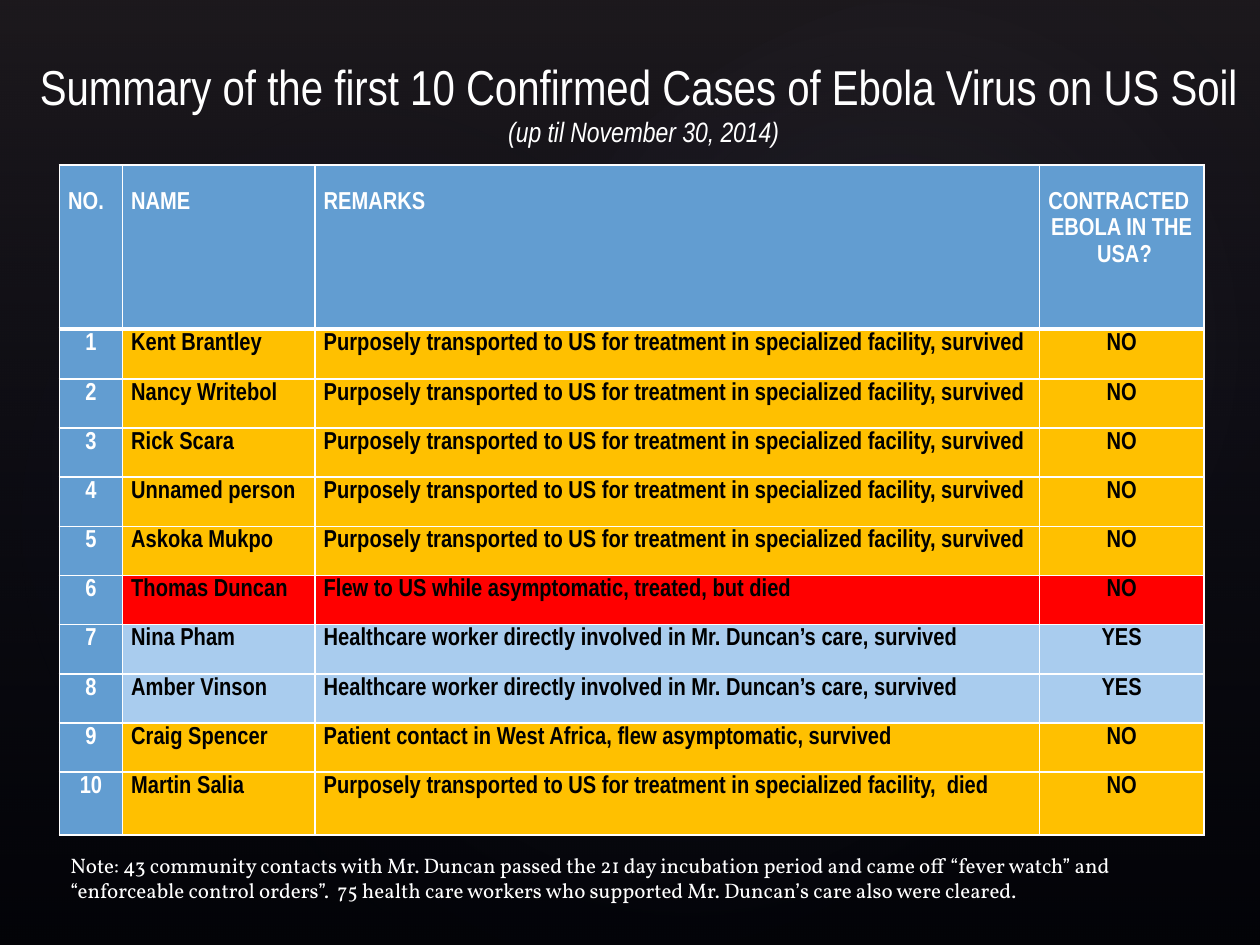
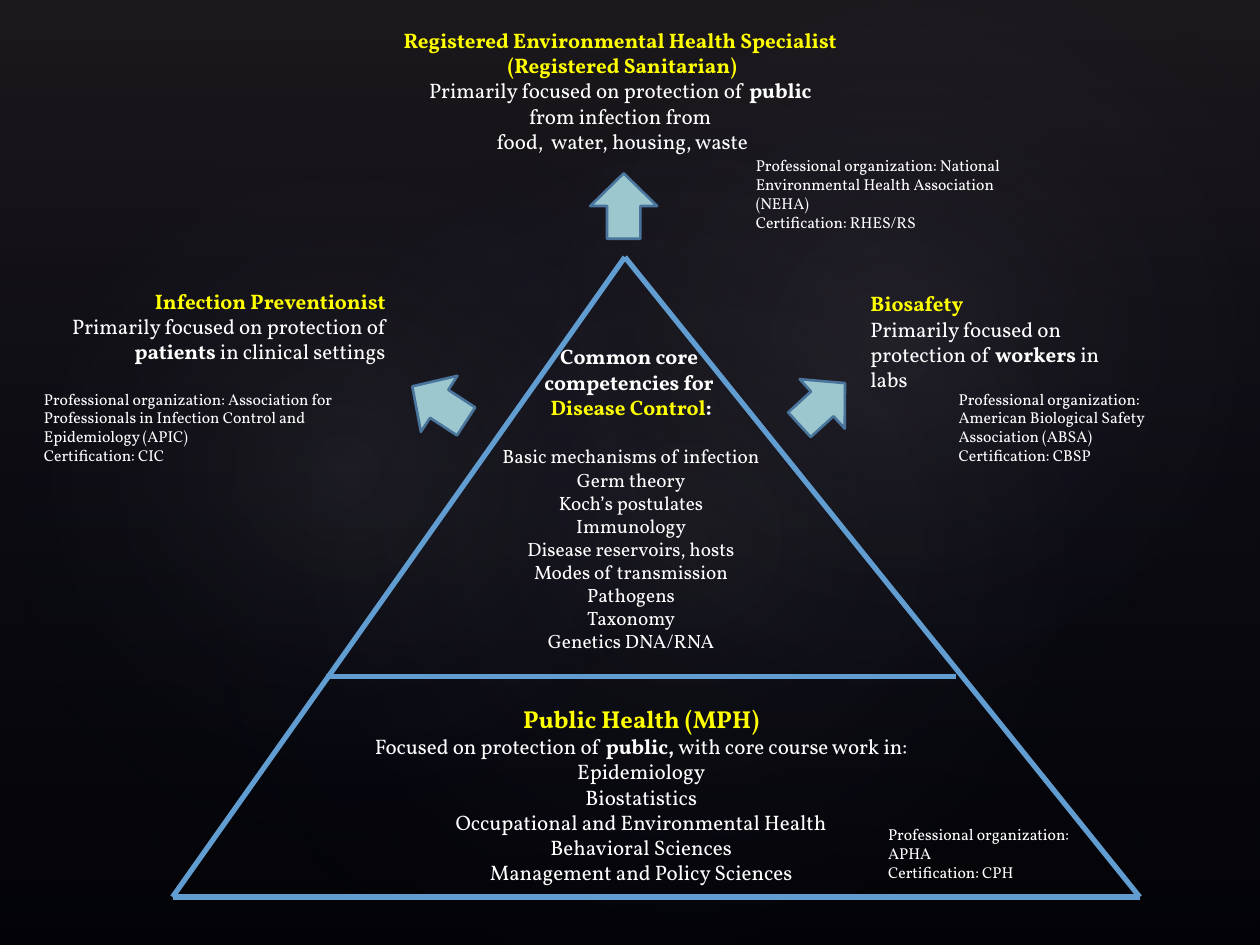
from pptx import Presentation
from pptx.dml.color import RGBColor
from pptx.enum.shapes import MSO_CONNECTOR, MSO_SHAPE
from pptx.enum.text import PP_ALIGN
from pptx.oxml import parse_xml
from pptx.oxml.ns import nsdecls, qn
from pptx.util import Pt

LEFT, CENTER, RIGHT = PP_ALIGN.LEFT, PP_ALIGN.CENTER, PP_ALIGN.RIGHT
RECTANGLE, OVAL, LEFT_ARROW = MSO_SHAPE.RECTANGLE, MSO_SHAPE.OVAL, MSO_SHAPE.LEFT_ARROW
STRAIGHT = MSO_CONNECTOR.STRAIGHT

BLACK, WHITE, YELLOW = "000000", "FFFFFF", "FFFF00"
BLUE, PALE_BLUE, AMBER, RED = "629DD1", "A9CCEE", "FFC000", "FF0000"
ARROW_FILL, ARROW_EDGE = "9CC7CE", "49749B"
VEIL, NAVY, GLOW = "504652", "242852", "C4BCC6"
NARROW, SERIF = "Arial Narrow", "Vollkorn"

GLOWS = [
    (108, 82, 570, 449, 328.7, 7),
    (-21.6, 92.2, 436.3, 352.8, 294.3, 8),
    (257.8, 9.4, 510.5, 374.4, 328.7, 8),
]

HEADINGS = ["NO.", "NAME", "REMARKS", "CONTRACTED \nEBOLA IN THE\n USA?"]
COLUMN_WIDTHS = [36, 110, 414, 94]
ROW_HEIGHTS = [93.6, 28.6] + [28.1] * 8 + [36]
TRANSPORTED = "Purposely transported to US for treatment in specialized facility, "
CARE_WORKER = "Healthcare worker directly involved in Mr. Duncan’s care, survived"
CASES = [
    ("Kent Brantley", TRANSPORTED + "survived", "NO", AMBER),
    ("Nancy Writebol", TRANSPORTED + "survived", "NO", AMBER),
    ("Rick Scara", TRANSPORTED + "survived", "NO", AMBER),
    ("Unnamed person", TRANSPORTED + "survived", "NO", AMBER),
    ("Askoka Mukpo", TRANSPORTED + "survived", "NO", AMBER),
    ("Thomas Duncan", "Flew to US while asymptomatic, treated, but died", "NO", RED),
    ("Nina Pham", CARE_WORKER, "YES", PALE_BLUE),
    ("Amber Vinson", CARE_WORKER, "YES", PALE_BLUE),
    ("Craig Spencer", "Patient contact in West Africa, flew asymptomatic, survived", "NO", AMBER),
    ("Martin Salia", TRANSPORTED + " died", "NO", AMBER),
]
NOTE = ("Note: 43 community contacts with Mr. Duncan passed the 21 day incubation period "
        "and came off “fever watch” and “enforceable control orders”.  75 health care "
        "workers who supported Mr. Duncan’s care also were cleared.")

CORE_TOPICS = ["Basic mechanisms of infection", "Germ theory", "Koch’s postulates",
               "Immunology", "Disease reservoirs, hosts", "Modes of transmission",
               "Pathogens", "Taxonomy", "Genetics DNA/RNA"]
MPH_COURSES = ["Epidemiology", "Biostatistics", "Occupational and Environmental Health",
               "Behavioral Sciences", "Management and Policy Sciences"]
ORGANIZATIONS = [
    (424.8, 85.7, 168.5, "National Environmental Health Association (NEHA)", "RHES/RS"),
    (540.7, 218.9, 154.8, "American Biological Safety Association (ABSA)", "CBSP"),
    (18, 218.9, 185.8,
     "Association for Professionals in Infection Control and Epidemiology (APIC)", "CIC"),
    (500.4, 468, 139.7, "APHA", "CPH"),
]
APEX, BASE_LEFT, BASE_RIGHT = (357.1, 146.9), (98.6, 512.6), (651.3, 512.6)
DIVIDER_LEFT, DIVIDER_RIGHT = (186.5, 386.6), (546.5, 386.6)
PYRAMID_EDGES = [(DIVIDER_RIGHT, DIVIDER_LEFT), (BASE_LEFT, BASE_RIGHT),
                 (BASE_LEFT, APEX), (BASE_RIGHT, APEX)]
ARROWS = [(232.6, 211.7, 36.7, 33.1), (337.7, 98.6, 37.4, 90), (452.2, 211.7, 35.3, 137.6)]
ARROW_HEIGHT = 38.2


def rgb(color):
    return RGBColor.from_string(color)


def gradient(stops, direction):
    marks = "".join(
        f'<a:gs pos="{at * 1000}"><a:srgbClr val="{color}">'
        f'<a:alpha val="{alpha * 1000}"/></a:srgbClr></a:gs>'
        for at, color, alpha in stops)
    return parse_xml(f'<a:gradFill {nsdecls("a")} rotWithShape="1">'
                     f'<a:gsLst>{marks}</a:gsLst>{direction}</a:gradFill>')


def add_plain_shape(slide, kind, left, top, width, height, rotation=0):
    shape = slide.shapes.add_shape(kind, Pt(left), Pt(top), Pt(width), Pt(height))
    shape.rotation = rotation
    shape.shadow.inherit = False
    return shape


def add_haze(slide, kind, box, rotation, stops, direction):
    haze = add_plain_shape(slide, kind, *box, rotation)
    haze.line.fill.background()
    haze.fill.background()
    properties = haze._element.spPr
    properties.replace(properties.find(qn("a:noFill")), gradient(stops, direction))


def add_dark_slide(deck):
    slide = deck.slides.add_slide(deck.slide_layouts[6])
    add_haze(slide, RECTANGLE, (0, 0, 720, 540), 0,
             [(0, VEIL, 36), (100, NAVY, 10)], '<a:lin ang="5400000" scaled="0"/>')
    center = ('<a:path path="circle">'
              '<a:fillToRect l="50000" t="50000" r="50000" b="50000"/></a:path>')
    for *box, rotation, alpha in GLOWS:
        add_haze(slide, OVAL, box, rotation, [(0, GLOW, alpha), (58, NAVY, 0)], center)
    return slide


def style_run(run, size, color=WHITE, bold=False, italic=False, font=SERIF):
    run.font.name = font
    run.font.size = Pt(size)
    run.font.color.rgb = rgb(color)
    run.font.bold = bold
    run.font.italic = italic


def plain(text, size=12):
    return [(text, {"size": size})]


def strong(text, size=12, color=WHITE):
    return [(text, {"size": size, "color": color, "bold": True})]


def add_text(slide, left, top, width, height, paragraphs, align=LEFT, wrap=True):
    frame = slide.shapes.add_textbox(Pt(left), Pt(top), Pt(width), Pt(height)).text_frame
    frame.word_wrap = wrap
    for index, pieces in enumerate(paragraphs):
        paragraph = frame.add_paragraph() if index else frame.paragraphs[0]
        paragraph.alignment = align
        for text, style in pieces:
            run = paragraph.add_run()
            run.text = text
            style_run(run, **style)
    return frame


def add_edge(slide, start, end):
    edge = slide.shapes.add_connector(STRAIGHT, *(Pt(value) for value in start + end))
    edge.line.color.rgb = rgb(BLUE)
    edge.line.width = Pt(3)
    edge._element.spPr.append(parse_xml(f'<a:effectLst {nsdecls("a")}/>'))


def add_arrow(slide, left, top, width, rotation):
    arrow = add_plain_shape(slide, LEFT_ARROW, left, top, width, ARROW_HEIGHT, rotation)
    arrow.fill.solid()
    arrow.fill.fore_color.rgb = rgb(ARROW_FILL)
    arrow.line.color.rgb = rgb(ARROW_EDGE)
    arrow.line.width = Pt(1.5)


def set_borders(cell, bottom):
    properties = cell._tc.get_or_add_tcPr()
    for position, (side, width) in enumerate(
            [("lnL", 1), ("lnR", 1), ("lnT", 1), ("lnB", bottom)]):
        properties.insert(position, parse_xml(
            f'<a:{side} {nsdecls("a")} w="{Pt(width)}"><a:solidFill>'
            f'<a:srgbClr val="{WHITE}"/></a:solidFill></a:{side}>'))


def fill_cell(cell, text, fill, color, align, top_gap=0, bottom_border=1):
    cell.fill.solid()
    cell.fill.fore_color.rgb = rgb(fill)
    set_borders(cell, bottom_border)
    cell.margin_left = cell.margin_right = Pt(5)
    cell.margin_top, cell.margin_bottom = Pt(top_gap), 0
    cell.text_frame.text = text
    for paragraph in cell.text_frame.paragraphs:
        paragraph.alignment = align
        paragraph.line_spacing = 1.15
        for run in paragraph.runs:
            style_run(run, 14, color, bold=True, font=NARROW)


def add_case_table(slide):
    table = slide.shapes.add_table(len(ROW_HEIGHTS), len(COLUMN_WIDTHS), Pt(34), Pt(94.3),
                                   Pt(sum(COLUMN_WIDTHS)), Pt(sum(ROW_HEIGHTS))).table
    for column, width in zip(table.columns, COLUMN_WIDTHS):
        column.width = Pt(width)
    for row, height in zip(table.rows, ROW_HEIGHTS):
        row.height = Pt(height)
    for column, (heading, align) in enumerate(zip(HEADINGS, [LEFT, LEFT, LEFT, CENTER])):
        fill_cell(table.cell(0, column), heading, BLUE, WHITE, align, 13, 3)
    for number, (name, remark, contracted, fill) in enumerate(CASES, 1):
        fill_cell(table.cell(number, 0), str(number), BLUE, WHITE, CENTER)
        fill_cell(table.cell(number, 1), name, fill, BLACK, LEFT)
        fill_cell(table.cell(number, 2), remark, fill, BLACK, LEFT)
        fill_cell(table.cell(number, 3), contracted, fill, BLACK, CENTER)


def build_case_summary(deck):
    slide = add_dark_slide(deck)
    add_case_table(slide)
    add_text(slide, 11.5, 28.5, 712.8, 60, [
        [("Summary of the first 10 Confirmed Cases of Ebola Virus on US Soil ",
          {"size": 28, "font": NARROW})],
        [("(up til November 30, 2014)", {"size": 16, "italic": True, "font": NARROW})],
    ], CENTER, wrap=False)
    add_text(slide, 33.1, 483.8, 656.6, 50, [plain(NOTE)])


def build_competency_pyramid(deck):
    slide = add_dark_slide(deck)
    for start, end in PYRAMID_EDGES:
        add_edge(slide, start, end)
    add_text(slide, 186.5, 398.9, 360, 111.6, [
        strong("Public Health (MPH)", 14, YELLOW),
        plain("Focused on protection of ") + strong("public, ")
        + plain("with core course work in:"),
        *map(plain, MPH_COURSES),
    ], CENTER)
    core = add_text(slide, 180.7, 193, 360, 185, [
        strong("Common core "),
        strong("competencies for "),
        strong("Disease Control", color=YELLOW) + strong(":"),
        *(plain(topic, 11) for topic in CORE_TOPICS),
    ], CENTER)
    core.paragraphs[3].space_before = Pt(14.4)
    add_text(slide, 0, 161.3, 227.5, 51.1, [
        strong("Infection Preventionist", color=YELLOW),
        plain("Primarily focused on protection of"),
        strong("patients") + plain(" in clinical settings"),
    ], RIGHT)
    add_text(slide, 175.7, 12.2, 360, 79.9, [
        strong("Registered Environmental Health Specialist ", color=YELLOW),
        strong("(Registered Sanitarian)", color=YELLOW),
        plain("Primarily focused on protection of ") + strong("public "),
        plain("from infection from "),
        plain("food,  water, housing, waste"),
    ], CENTER)
    add_text(slide, 490.3, 162.7, 159.1, 65.5, [
        strong("Biosafety", color=YELLOW),
        plain("Primarily focused on protection of ") + strong("workers") + plain(" in labs"),
    ])
    for arrow in ARROWS:
        add_arrow(slide, *arrow)
    for left, top, width, organization, certification in ORGANIZATIONS:
        add_text(slide, left, top, width, 62, [
            plain(f"Professional organization: {organization}", 9),
            plain(f"Certification: {certification}", 9),
        ])


def main():
    deck = Presentation()
    deck.slide_width, deck.slide_height = Pt(720), Pt(540)
    backdrop = deck.slide_master.background.fill
    backdrop.solid()
    backdrop.fore_color.rgb = rgb(BLACK)
    build_case_summary(deck)
    build_competency_pyramid(deck)
    deck.save("out.pptx")


if __name__ == "__main__":
    main()
